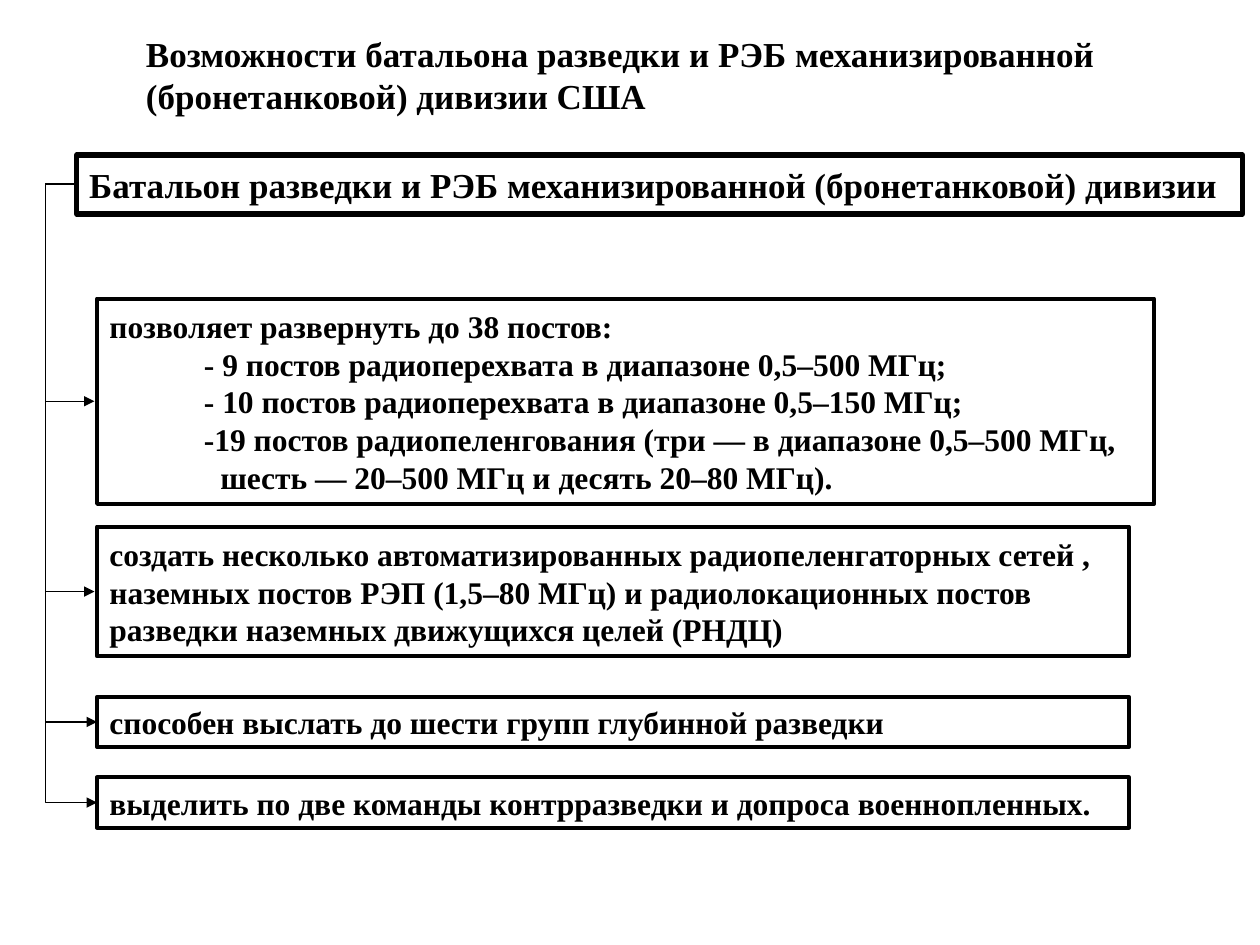
from dataclasses import dataclass

from lxml.etree import SubElement
from pptx import Presentation
from pptx.dml.color import RGBColor
from pptx.enum.shapes import MSO_CONNECTOR, MSO_SHAPE
from pptx.enum.text import MSO_ANCHOR, PP_ALIGN
from pptx.oxml.ns import qn
from pptx.util import Inches, Pt


@dataclass(frozen=True)
class Theme:
    font: str = "Times New Roman"
    ink: RGBColor = RGBColor(0, 0, 0)
    heading: Pt = Pt(20)
    body: Pt = Pt(18)
    header_border: Pt = Pt(3)
    box_border: Pt = Pt(2.25)
    connector: Pt = Pt(0.75)


theme = Theme()


def write_lines(shape, lines, size):
    """Fill a shape with (text, left indent in inches) paragraphs."""
    frame = shape.text_frame
    frame.word_wrap = True
    for index, (text, indent) in enumerate(lines):
        paragraph = frame.paragraphs[0] if index == 0 else frame.add_paragraph()
        paragraph.text = text
        paragraph.alignment = PP_ALIGN.LEFT
        paragraph.font.name = theme.font
        paragraph.font.size = size
        paragraph.font.bold = True
        paragraph.font.color.rgb = theme.ink
        if indent:
            paragraph._p.get_or_add_pPr().set("marL", str(Inches(indent)))


def add_box(left, top, width, height, lines, size, border):
    box = slide.shapes.add_shape(
        MSO_SHAPE.RECTANGLE, Inches(left), Inches(top), Inches(width), Inches(height))
    box.shadow.inherit = False
    box.fill.background()
    box.line.color.rgb = theme.ink
    box.line.width = border
    box.text_frame.vertical_anchor = MSO_ANCHOR.MIDDLE
    write_lines(box, lines, size)


presentation = Presentation()
presentation.slide_width = Inches(10)
presentation.slide_height = Inches(7.5)
slide = presentation.slides.add_slide(presentation.slide_layouts[6])

# Title and header
title = slide.shapes.add_textbox(Inches(1.06), Inches(0.21), Inches(8.19), Inches(0.77))
write_lines(
    title,
    [("Возможности батальона разведки и РЭБ механизированной (бронетанковой) дивизии США", 0)],
    theme.heading)
add_box(
    0.61, 1.23, 9.25, 0.47,
    [("Батальон разведки и РЭБ механизированной (бронетанковой) дивизии", 0)],
    theme.heading, theme.header_border)

# Capabilities: top, width, height, connector start, lines
box_left = 0.77
capabilities = [
    (2.37, 8.39, 1.63, 0.59, [
        ("позволяет развернуть до 38 постов:", 0),
        ("- 9 постов радиоперехвата в диапазоне 0,5–500 МГц;", 0.75),
        ("- 10 постов радиоперехвата в диапазоне 0,5–150 МГц;", 0.75),
        ("-19 постов радиопеленгования (три ― в диапазоне 0,5–500 МГц,", 0.75),
        ("шесть ― 20–500 МГц и десять 20–80 МГц).", 0.88),
    ]),
    (4.18, 8.19, 1.03, 0.59, [
        ("создать несколько автоматизированных радиопеленгаторных сетей , "
         "наземных постов РЭП (1,5–80 МГц) и радиолокационных постов "
         "разведки наземных движущихся целей (РНДЦ)", 0),
    ]),
    (5.53, 8.19, 0.4, 0.61, [("способен выслать до шести групп глубинной разведки", 0)]),
    (6.17, 8.19, 0.4, 0.61, [
        ("выделить по две команды контрразведки и допроса военнопленных.", 0),
    ]),
]
for top, width, height, start, lines in capabilities:
    add_box(box_left, top, width, height, lines, theme.body, theme.box_border)

# Elbow arrows share one vertical trunk to the left of the boxes
trunk_left, header_middle, reach = 0.36, 1.46, 0.16
for top, width, height, start, lines in capabilities:
    arrow = slide.shapes.add_connector(
        MSO_CONNECTOR.ELBOW, Inches(start), Inches(header_middle),
        Inches(start + reach), Inches(top + height / 2))
    arrow.line.color.rgb = theme.ink
    arrow.line.width = theme.connector
    properties = arrow._element.spPr
    adjustments = properties.find(qn("a:prstGeom")).get_or_add_avLst()
    bend = round((trunk_left - start) / reach * 100000)
    SubElement(adjustments, qn("a:gd"), name="adj1", fmla=f"val {bend}")
    SubElement(properties.find(qn("a:ln")), qn("a:tailEnd"), type="triangle")
    SubElement(properties, qn("a:effectLst"))

presentation.save("out.pptx")
